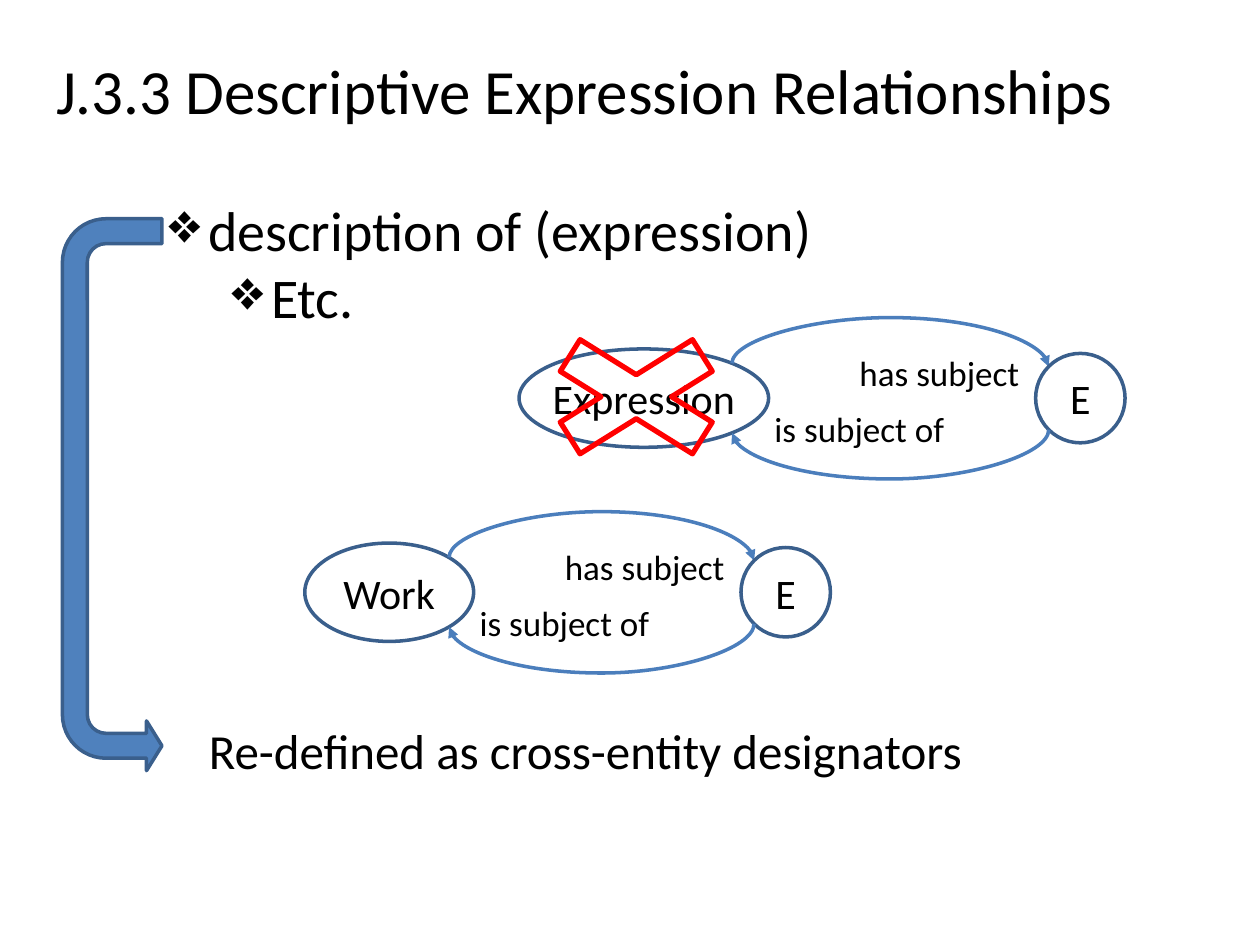
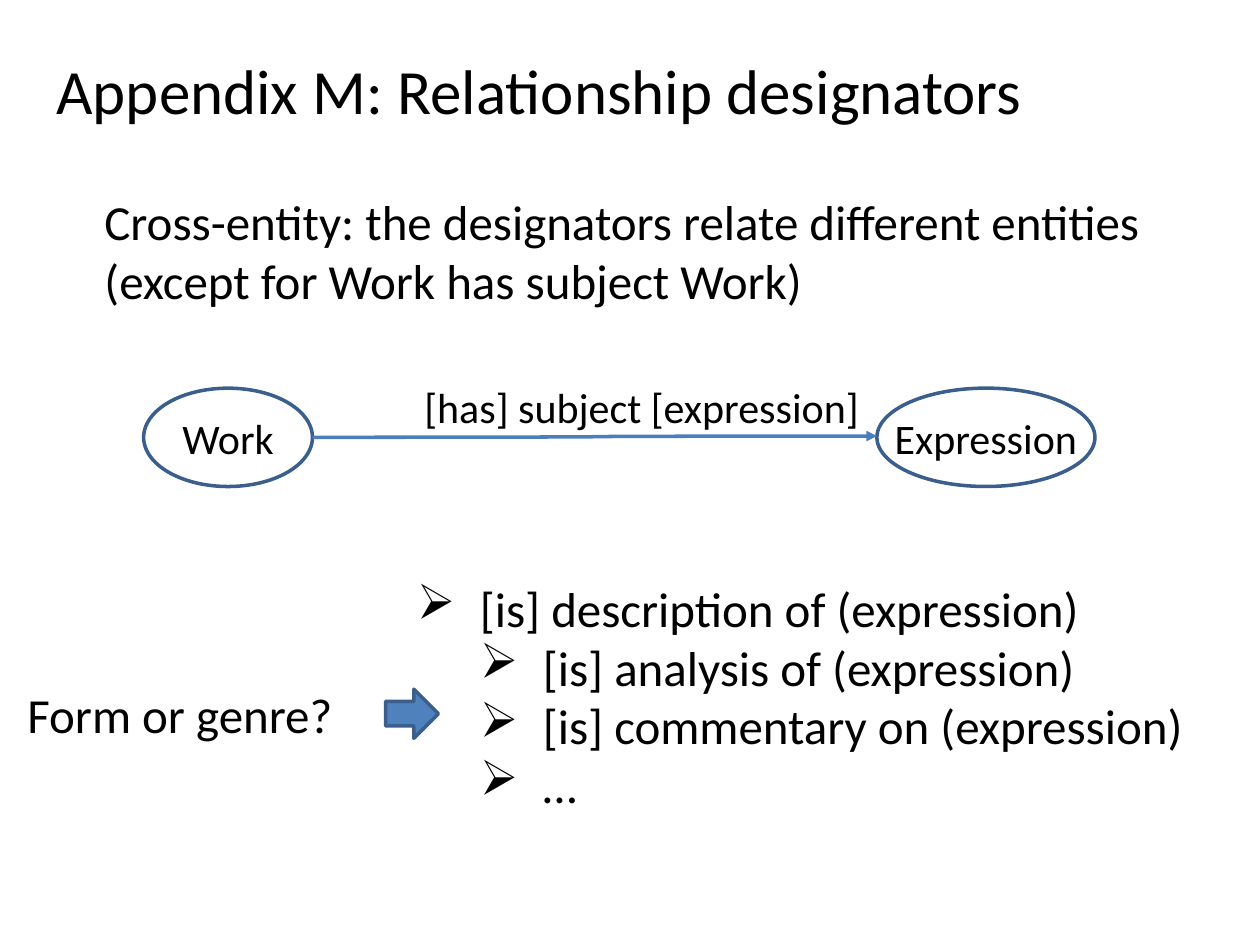
"""Build two slides on expression relationships and designators."""
import math

import lxml.etree
import pptx
import pptx.dml.color
import pptx.enum.shapes
import pptx.enum.text
import pptx.oxml.ns
import pptx.util

Pt = pptx.util.Pt
RGBColor = pptx.dml.color.RGBColor
SHAPE = pptx.enum.shapes.MSO_SHAPE
CURVE = pptx.enum.shapes.MSO_CONNECTOR.CURVE
CENTER = pptx.enum.text.PP_ALIGN.CENTER
qn = pptx.oxml.ns.qn

BLACK = RGBColor(0x00, 0x00, 0x00)
RED = RGBColor(0xFF, 0x00, 0x00)
BLUE = RGBColor(0x4F, 0x81, 0xBD)
OUTLINE = RGBColor(0x3A, 0x5F, 0x8C)
ARROW = RGBColor(0x4B, 0x7E, 0xBC)

NODE_HEIGHT = 56.2
CIRCLE = 51.1
WORK_WIDTH = 96.5


class SlideWriter:
    """Hold the shared style and the current page, and draw elements on it."""

    font_name = "Calibri"

    def __init__(self, deck):
        self.deck = deck
        self.page = None

    def start_page(self, title, width):
        self.page = self.deck.slides.add_slide(self.deck.slide_layouts[6])
        self.text(title, 25.2, 26, width, 51, 36)

    def style(self, para, size, align=None):
        para.alignment = align
        para.font.name = self.font_name
        para.font.size = Pt(size)
        para.font.color.rgb = BLACK

    def frame(self, left, top, width, height, wrap=False):
        box = self.page.shapes.add_textbox(Pt(left), Pt(top), Pt(width), Pt(height))
        box.text_frame.word_wrap = wrap
        box.text_frame.auto_size = pptx.enum.text.MSO_AUTO_SIZE.SHAPE_TO_FIT_TEXT
        return box.text_frame

    def text(self, words, left, top, width, height, size, wrap=False):
        para = self.frame(left, top, width, height, wrap).paragraphs[0]
        para.text = words
        self.style(para, size)

    def caption(self, words, left, top, width):
        frame = self.frame(left, top, width, 30.2)
        frame.margin_left = frame.margin_right = Pt(3)
        frame.margin_top = frame.margin_bottom = Pt(3)
        frame.text = words
        self.style(frame.paragraphs[0], 20, CENTER)

    def bullets(self, items, left, top, width, height, size, mark, hang):
        """Write (level, words) items, each level 36 points further in."""
        frame = self.frame(left, top, width, height)
        for index, (level, words) in enumerate(items):
            para = frame.add_paragraph() if index else frame.paragraphs[0]
            para.text = words
            para.level = level
            properties = para._p.get_or_add_pPr()
            properties.set("marL", str(Pt(hang + 36 * level)))
            properties.set("indent", str(-Pt(hang)))
            lxml.etree.SubElement(properties, qn("a:buChar"), char=mark)
            self.style(para, size)

    def shape(self, kind, left, top, width, height, fill=None, line=OUTLINE, weight=2):
        shape = self.page.shapes.add_shape(kind, Pt(left), Pt(top), Pt(width), Pt(height))
        shape.shadow.inherit = False
        if fill is None:
            shape.fill.background()
        else:
            shape.fill.solid()
            shape.fill.fore_color.rgb = fill
        shape.line.color.rgb = line
        shape.line.width = Pt(weight)
        return shape

    def node(self, words, left, top, width, height=NODE_HEIGHT):
        frame = self.shape(SHAPE.OVAL, left, top, width, height).text_frame
        frame.word_wrap = False
        frame.margin_left = frame.margin_right = 0
        frame.margin_top = frame.margin_bottom = 0
        frame.vertical_anchor = pptx.enum.text.MSO_ANCHOR.MIDDLE
        frame.text = words
        self.style(frame.paragraphs[0], 24, CENTER)

    def curve(self, start_x, start_y, end_x, end_y):
        connector = self.page.shapes.add_connector(
            CURVE, Pt(start_x), Pt(start_y), Pt(end_x), Pt(end_y))
        connector.line.color.rgb = ARROW
        connector.line.width = Pt(2)
        line = connector.line._get_or_add_ln()
        lxml.etree.SubElement(line, qn("a:tailEnd"), type="triangle")
        lxml.etree.SubElement(connector._element.spPr, qn("a:effectLst"))
        return connector

    def arc(self, start_x, start_y, end_x, end_y, bulge):
        """Draw a sideways curve that bows by bulge, upwards if negative."""
        span_x, span_y = abs(end_x - start_x), end_y - start_y
        middle_x, middle_y = (start_x + end_x) / 2, (start_y + end_y) / 2
        left, top = middle_x - span_y / 2, middle_y - span_x / 2
        connector = self.curve(left, top, left + span_y, top + span_x)
        properties = connector._element.spPr
        frame = properties.find(qn("a:xfrm"))
        frame.set("rot", str((270 if bulge < 0 else 90) * 60000))
        if bulge < 0:
            frame.set("flipH", "1")
        guides = properties.find(qn("a:prstGeom")).get_or_add_avLst()
        lxml.etree.SubElement(guides, qn("a:gd"), name="adj1",
                              fmla=f"val {round(bulge / span_y * 100000)}")

    def subject_cycle(self, name, left, top, width, circle_left):
        """Draw an entity and E, joined both ways at their diagonal points."""
        diagonal = math.sqrt(0.5) / 2
        middle = top + NODE_HEIGHT / 2
        entity_x = left + width * (0.5 + diagonal)
        circle_x = circle_left + CIRCLE * (0.5 - diagonal)
        entity_rise, circle_rise = NODE_HEIGHT * diagonal, CIRCLE * diagonal
        self.node(name, left, top, width)
        self.arc(entity_x, middle - entity_rise, circle_x, middle - circle_rise, -26)
        self.caption("has subject", circle_left - 104, top - 1.4, 98)
        self.node("E", circle_left, middle - CIRCLE / 2, CIRCLE, CIRCLE)
        self.arc(circle_x, middle + circle_rise, entity_x, middle + entity_rise, 28)
        self.caption("is subject of", left + width, top + 30.3, 103.7)


def expression_relationships(writer):
    writer.start_page("J.3.3 Descriptive Expression Relationships", 624.2)
    writer.bullets([(0, "description of (expression)"), (1, "Etc.")],
                   89.3, 108, 399.6, 85, 32, "❖", 22.5)
    writer.subject_cycle("Work", 174.2, 310.3, WORK_WIDTH, 423.4)
    writer.subject_cycle("Expression", 296.6, 199.4, 142.6, 591.8)
    writer.shape(SHAPE.MATH_MULTIPLY, 290.9, 181.4, 145.4, 90.7, line=RED, weight=3)
    turn = writer.shape(SHAPE.U_TURN_ARROW, -93.6, 254.2, 315.4, 56.9, BLUE)
    for index, value in enumerate((0.25, 0.25, 0.155, 0.438, 1)):
        turn.adjustments[index] = value
    turn.rotation = 90
    turn._element.spPr.find(qn("a:xfrm")).set("flipV", "1")
    writer.text("Re-defined as cross-entity designators", 112.3, 408.2, 450, 41, 28)


def relationship_designators(writer):
    writer.start_page("Appendix M: Relationship designators", 579.6)
    writer.text("Cross-entity: the designators relate different entities "
                "(except for Work has subject Work)",
                52.6, 105.8, 619.2, 75, 28, wrap=True)
    writer.bullets([(0, "[is] description of (expression)"),
                    (1, "[is] analysis of (expression)"),
                    (1, "[is] commentary on (expression)"),
                    (1, "…")],
                   231.1, 326.9, 457.2, 143.3, 28, "➢", 36)
    work_left, expression_left, top = 82.1, 501.1, 221.8
    middle = top + NODE_HEIGHT / 2
    writer.node("Work", work_left, top, WORK_WIDTH)
    writer.node("Expression", expression_left, top, 124.6)
    writer.text("[has] subject [expression]", 235.4, 214.6, 265.7, 36, 24)
    writer.curve(work_left + WORK_WIDTH, middle, expression_left, middle - 0.7)
    writer.text("Form or genre?", 8.6, 387.4, 190.8, 41, 28)
    writer.shape(SHAPE.RIGHT_ARROW, 220.3, 393.8, 30.2, 28.1, BLUE)


def main():
    deck = pptx.Presentation()
    deck.slide_width, deck.slide_height = Pt(720), Pt(540)
    writer = SlideWriter(deck)
    expression_relationships(writer)
    relationship_designators(writer)
    deck.save("out.pptx")


if __name__ == "__main__":
    main()
